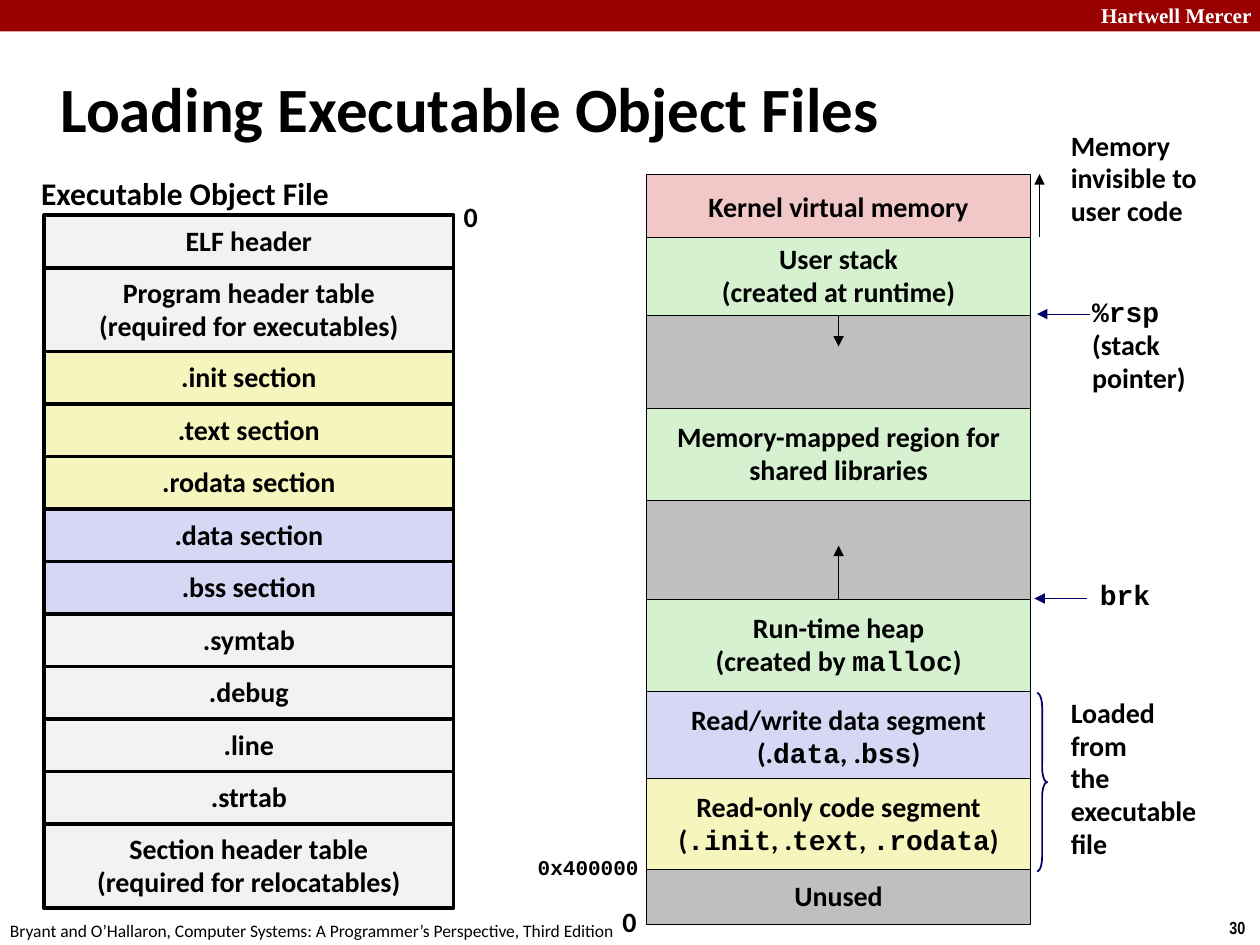
from dataclasses import dataclass

from lxml.etree import SubElement
from pptx import Presentation
from pptx.dml.color import RGBColor
from pptx.enum.shapes import MSO_CONNECTOR, MSO_SHAPE
from pptx.enum.text import MSO_ANCHOR, PP_ALIGN
from pptx.oxml.ns import qn
from pptx.util import Pt


@dataclass(frozen=True)
class Theme:
    black: str = "000000"
    white: str = "FFFFFF"
    banner: str = "990000"
    navy: str = "000066"
    neutral: str = "F2F2F2"
    code: str = "F6F5BD"
    data: str = "D6D6F5"
    kernel: str = "F1C7C7"
    runtime: str = "D5F1CF"
    unused: str = "BFBFBF"
    sans: str = "Calibri"
    mono: str = "Courier New"
    serif: str = "Times New Roman"
    narrow: str = "Arial Narrow"
    title_size: int = 36
    heading_size: int = 18
    body_size: int = 16
    small_size: int = 12
    footer_size: int = 10


theme = Theme()


def write_text(shape, text, size=theme.body_size, align=PP_ALIGN.LEFT, font=theme.sans,
               color=theme.black, bold=True, spacing=0.98, wrap=False):
    """Write one paragraph per line; parts between backticks are monospaced."""
    frame = shape.text_frame
    frame.word_wrap = wrap
    frame.text = text.replace("`", "")
    for paragraph, line in zip(frame.paragraphs, text.split("\n")):
        paragraph.alignment = align
        paragraph.line_spacing = 0.94 if line.startswith("`") else spacing
        paragraph.text = ""
        for index, part in enumerate(line.split("`")):
            if part:
                run = paragraph.add_run()
                run.text = part
                run.font.name = theme.mono if index % 2 else font
                run.font.size = Pt(size)
                run.font.bold = bold
                run.font.color.rgb = RGBColor.from_string(color)


def add_arrow(start_x, start_y, end_x, end_y, color):
    arrow = slide.shapes.add_connector(
        MSO_CONNECTOR.STRAIGHT, Pt(start_x), Pt(start_y), Pt(end_x), Pt(end_y))
    arrow.line.color.rgb = RGBColor.from_string(color)
    arrow.line.width = Pt(0.25)
    SubElement(arrow.line._get_or_add_ln(), qn("a:tailEnd"), type="triangle")
    SubElement(arrow._element.spPr, qn("a:effectLst"))
    return arrow


presentation = Presentation()
presentation.slide_width = Pt(720)
presentation.slide_height = Pt(540)
slide = presentation.slides.add_slide(presentation.slide_layouts[6])

banner = slide.shapes.add_shape(MSO_SHAPE.RECTANGLE, 0, 0, Pt(720), Pt(18))
banner.shadow.inherit = False
banner.fill.solid()
banner.fill.fore_color.rgb = RGBColor.from_string(theme.banner)
banner.line.fill.background()

# Boxes: left, top, width, height, fill, line width, text
file_left, file_width, row_height, tall_row_height = 25.2, 234, 30, 48
file_sections = [
    ("ELF header", theme.neutral),
    ("Program header table\n(required for executables)", theme.neutral),
    (".init section", theme.code),
    (".text section", theme.code),
    (".rodata section", theme.code),
    (".data section", theme.data),
    (".bss section", theme.data),
    (".symtab", theme.neutral),
    (".debug", theme.neutral),
    (".line", theme.neutral),
    (".strtab", theme.neutral),
    ("Section header table\n(required for relocatables)", theme.neutral),
]
boxes = []
top = 123
for text, fill in file_sections:
    height = tall_row_height if "\n" in text else row_height
    boxes.append((file_left, top, file_width, height, fill, 2, text))
    top += height

memory_left, memory_width = 369.4, 219.6
memory_segments = [
    (99.5, 38, theme.kernel, "Kernel virtual memory"),
    (180, 53.5, theme.unused, ""),
    (135.5, 44.5, theme.runtime, "User stack\n(created at runtime)"),
    (233.5, 52.5, theme.runtime, "Memory-mapped region for\nshared libraries"),
    (286, 56.5, theme.unused, ""),
    (342.5, 52.5, theme.runtime, "Run-time heap\n(created by `malloc`)"),
    (395, 52.5, theme.data, "Read/write data segment\n(.`data`, .`bss`)"),
    (444.5, 52.5, theme.code, "Read-only code segment\n(`.init`, .`text`, `.rodata`)"),
    (497, 31, theme.unused, "Unused"),
]
for top, height, fill, text in memory_segments:
    boxes.append((memory_left, top, memory_width, height, fill, 0.25, text))

box_shapes = {}
for left, top, width, height, fill, line_width, text in boxes:
    box = slide.shapes.add_shape(
        MSO_SHAPE.RECTANGLE, Pt(left), Pt(top), Pt(width), Pt(height))
    box.shadow.inherit = False
    box.fill.solid()
    box.fill.fore_color.rgb = RGBColor.from_string(fill)
    box.line.color.rgb = RGBColor.from_string(theme.black)
    box.line.width = Pt(line_width)
    box.text_frame.vertical_anchor = MSO_ANCHOR.MIDDLE
    if text:
        write_text(box, text, align=PP_ALIGN.CENTER)
        box_shapes[text.split("\n")[0]] = box

# Stack and heap growth, then the pointers beside the memory column
memory_middle = memory_left + memory_width / 2
stack_arrow = add_arrow(memory_middle, 180, memory_middle, 198, theme.black)
stack_arrow.begin_connect(box_shapes["User stack"], 2)
heap_arrow = add_arrow(memory_middle, 342.5, memory_middle, 311.8, theme.black)
heap_arrow.begin_connect(box_shapes["Run-time heap"], 0)
add_arrow(594, 135.5, 594, 99.5, theme.black)
add_arrow(622.8, 179.5, 592.6, 179.5, theme.navy)
add_arrow(621.4, 342, 591.1, 342, theme.navy)

brace = slide.shapes.add_shape(
    MSO_SHAPE.RIGHT_BRACE, Pt(592.6), Pt(396), Pt(5.8), Pt(102))
brace.adjustments[0] = 1.42
brace.shadow.inherit = False
brace.fill.background()
brace.line.color.rgb = RGBColor.from_string(theme.navy)
brace.line.width = Pt(1)

# Labels: left, top, width, height, text, formatting
footer = {"size": theme.footer_size, "spacing": 1}
labels = [
    (27.4, 30.2, 686, 62, "Loading Executable Object Files",
     {"size": theme.title_size, "spacing": 1, "wrap": True}),
    (15.8, 97.2, 180, 28.8, "Executable Object File",
     {"size": theme.heading_size, "align": PP_ALIGN.CENTER}),
    (257.8, 111.6, 22.3, 26.6, "0", {}),
    (348.5, 514.1, 22.3, 26.6, "0", {}),
    (300.2, 486, 72.7, 21.6, "`0x400000`", {"size": theme.small_size}),
    (604.8, 70.6, 103.7, 64.8, "Memory\ninvisible to user code", {"wrap": True}),
    (617, 166.3, 68.4, 63.4, "`%rsp`\n(stack\npointer)", {}),
    (621.4, 328.3, 43.2, 25.9, "`brk`", {}),
    (604.8, 394.6, 90.7, 102.2, "Loaded\nfrom\nthe\nexecutable\nfile", {"wrap": True}),
    (622.1, -2.2, 103, 21.6, "Hartwell Mercer",
     {"size": theme.small_size, "font": theme.serif, "color": theme.white, "spacing": 1}),
    (695.5, 520.6, 24.5, 19.4, "30", {**footer, "font": theme.narrow}),
    (-1.4, 522, 365.8, 19.4,
     "Bryant and O’Hallaron, Computer Systems: A Programmer’s Perspective, Third Edition",
     {**footer, "bold": False}),
]
for left, top, width, height, text, formatting in labels:
    label = slide.shapes.add_textbox(Pt(left), Pt(top), Pt(width), Pt(height))
    write_text(label, text, **formatting)
    if formatting.get("size") == theme.title_size:
        label.text_frame.vertical_anchor = MSO_ANCHOR.MIDDLE

presentation.save("out.pptx")
